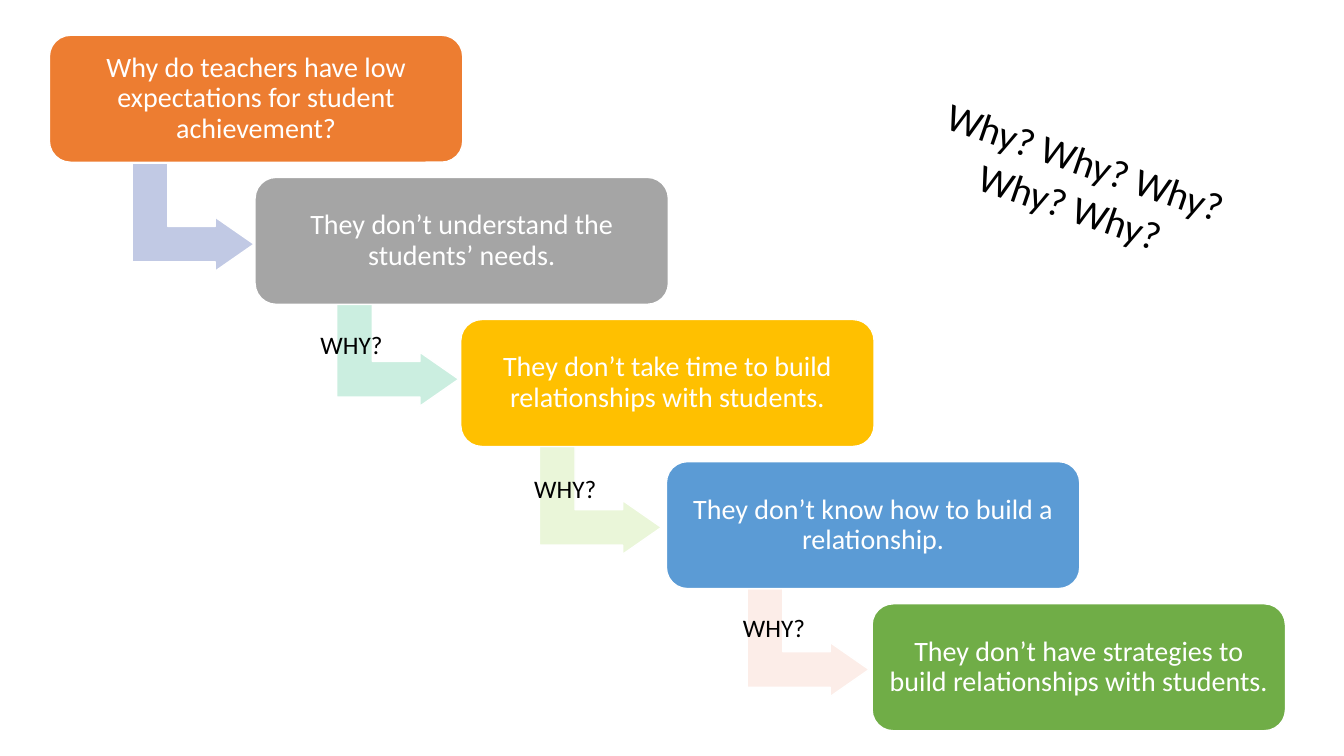
from dataclasses import dataclass

from pptx import Presentation
from pptx.dml.color import RGBColor
from pptx.enum.shapes import MSO_SHAPE
from pptx.enum.text import MSO_ANCHOR, PP_ALIGN
from pptx.shapes.autoshape import Shape
from pptx.slide import Slide
from pptx.text.text import TextFrame
from pptx.util import Inches, Pt


@dataclass(frozen=True)
class Theme:
    font: str = "Calibri"
    white: str = "FFFFFF"
    black: str = "000000"
    answer_size: int = 20
    why_size: int = 18
    chorus_size: int = 28


@dataclass(frozen=True)
class Answer:
    text: str
    fill: str


@dataclass(frozen=True)
class Arrow:
    left: float
    top: float
    fill: str


@dataclass(frozen=True)
class Caption:
    text: str
    left: float
    top: float
    width: float
    height: float
    size: int
    align: PP_ALIGN = PP_ALIGN.LEFT
    rotation: float = 0


THEME = Theme()

FIRST_LEFT, FIRST_TOP = 0.49, 0.35
STEP_RIGHT, STEP_DOWN = 2.04, 1.41
ANSWER_WIDTH, ANSWER_HEIGHT = 4.1, 1.26
ARROW_WIDTH, ARROW_HEIGHT = 1.07, 1.21

ANSWERS = [
    Answer("Why do teachers have low expectations for student achievement?", "ED7D31"),
    Answer("They don’t understand the students’ needs.", "A5A5A5"),
    Answer("They don’t take time to build relationships with students.", "FFC000"),
    Answer("They don’t know how to build a relationship.", "5B9BD5"),
    Answer("They don’t have strategies to build relationships with students.", "70AD47"),
]
ARROWS = [
    Arrow(1.38, 1.55, "C1C9E4"),
    Arrow(3.41, 2.89, "CBEEE0"),
    Arrow(5.42, 4.36, "EAF6D9"),
    Arrow(7.48, 5.77, "FCEDE8"),
]
CAPTIONS = [
    Caption("Why? Why? Why? Why? Why?", 8.78, 1.3, 3.82, 1.04,
            THEME.chorus_size, PP_ALIGN.CENTER, 19),
    *(Caption("WHY?", left, top, 1.22, 0.4, THEME.why_size)
      for left, top in [(3.08, 3.22), (5.2, 4.65), (7.27, 6.03)]),
]


def paint(shape: Shape, fill: str) -> None:
    """Give a shape a flat fill and a thin white outline."""
    shape.shadow.inherit = False
    shape.fill.solid()
    shape.fill.fore_color.rgb = RGBColor.from_string(fill)
    shape.line.color.rgb = RGBColor.from_string(THEME.white)
    shape.line.width = Pt(1)


def write(frame: TextFrame, text: str, size: int, color: str, align: PP_ALIGN) -> None:
    frame.word_wrap = True
    paragraph = frame.paragraphs[0]
    paragraph.alignment = align
    run = paragraph.add_run()
    run.text = text
    run.font.name = THEME.font
    run.font.size = Pt(size)
    run.font.color.rgb = RGBColor.from_string(color)


def add_arrow(slide: Slide, arrow: Arrow) -> None:
    bent = slide.shapes.add_shape(
        MSO_SHAPE.BENT_UP_ARROW, Inches(arrow.left), Inches(arrow.top),
        Inches(ARROW_WIDTH), Inches(ARROW_HEIGHT))
    bent.rotation = 90
    for index, value in enumerate((0.33, 0.25, 0.36)):
        bent.adjustments[index] = value
    paint(bent, arrow.fill)


def add_answer(slide: Slide, step: int, answer: Answer) -> None:
    box = slide.shapes.add_shape(
        MSO_SHAPE.ROUNDED_RECTANGLE,
        Inches(FIRST_LEFT + step * STEP_RIGHT), Inches(FIRST_TOP + step * STEP_DOWN),
        Inches(ANSWER_WIDTH), Inches(ANSWER_HEIGHT))
    paint(box, answer.fill)
    frame = box.text_frame
    frame.margin_left = frame.margin_right = Inches(0.08)
    frame.margin_top = frame.margin_bottom = Inches(0.08)
    frame.vertical_anchor = MSO_ANCHOR.MIDDLE
    frame.paragraphs[0].line_spacing = 0.9
    write(frame, answer.text, THEME.answer_size, THEME.white, PP_ALIGN.CENTER)


def add_caption(slide: Slide, caption: Caption) -> None:
    box = slide.shapes.add_textbox(
        Inches(caption.left), Inches(caption.top),
        Inches(caption.width), Inches(caption.height))
    box.rotation = caption.rotation
    write(box.text_frame, caption.text, caption.size, THEME.black, caption.align)


def main() -> None:
    presentation = Presentation()
    presentation.slide_width = Inches(13.33)
    presentation.slide_height = Inches(7.5)
    slide = presentation.slides.add_slide(presentation.slide_layouts.get_by_name("Blank"))
    for arrow in ARROWS:
        add_arrow(slide, arrow)
    for step, answer in enumerate(ANSWERS):
        add_answer(slide, step, answer)
    for caption in CAPTIONS:
        add_caption(slide, caption)
    presentation.save("out.pptx")


if __name__ == "__main__":
    main()
